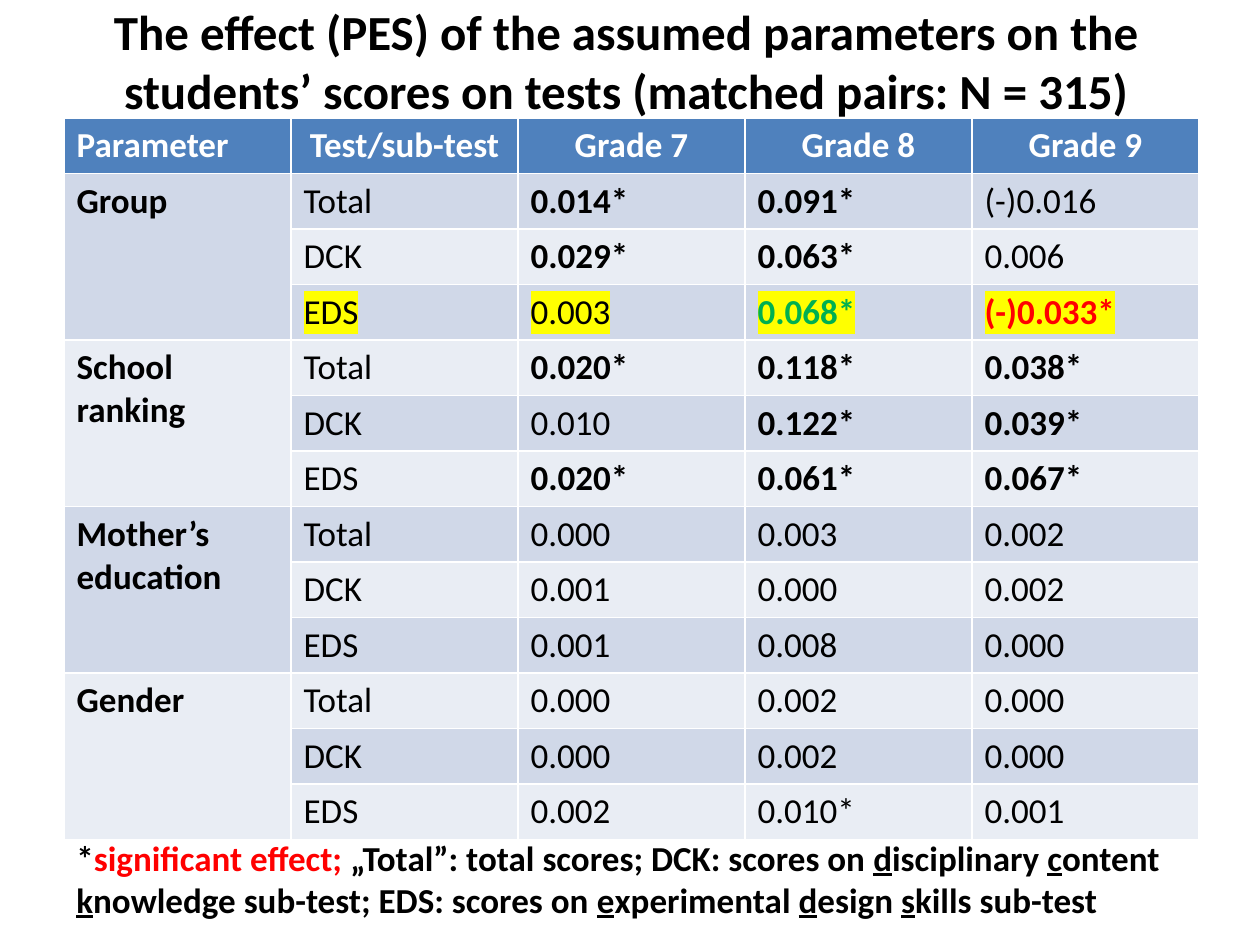
from lxml import etree
from pptx import Presentation
from pptx.dml.color import RGBColor
from pptx.enum.text import MSO_ANCHOR, MSO_AUTO_SIZE, PP_ALIGN
from pptx.oxml.ns import qn
from pptx.util import Pt

CENTER, LEFT = PP_ALIGN.CENTER, PP_ALIGN.LEFT
MIDDLE, TOP = MSO_ANCHOR.MIDDLE, MSO_ANCHOR.TOP
NO_FIT, GROW = MSO_AUTO_SIZE.NONE, MSO_AUTO_SIZE.SHAPE_TO_FIT_TEXT

BLACK = RGBColor(0x00, 0x00, 0x00)
WHITE = RGBColor(0xFF, 0xFF, 0xFF)
RED = RGBColor(0xFF, 0x00, 0x00)
GREEN = RGBColor(0x00, 0xB0, 0x50)
YELLOW = RGBColor(0xFF, 0xFF, 0x00)
BLUE = RGBColor(0x4F, 0x81, 0xBD)
BANDS = (RGBColor(0xD0, 0xD8, 0xE8), RGBColor(0xE9, 0xED, 0xF4))

TITLE = ("The effect (PES) of the assumed parameters on the "
         "students’ scores on tests (matched pairs: N = 315)")
HEAD = ("Parameter", "Test/sub-test", "Grade 7", "Grade 8", "Grade 9")
TESTS = ("Total", "DCK", "EDS")
GROUPS = (
    ("Group", (("0.014*", "0.091*", "(-)0.016"),
               ("0.029*", "0.063*", "0.006"),
               ("0.003", "0.068*", "(-)0.033*"))),
    ("School ranking", (("0.020*", "0.118*", "0.038*"),
                        ("0.010", "0.122*", "0.039*"),
                        ("0.020*", "0.061*", "0.067*"))),
    ("Mother’s education", (("0.000", "0.003", "0.002"),
                            ("0.001", "0.000", "0.002"),
                            ("0.001", "0.008", "0.000"))),
    ("Gender", (("0.000", "0.002", "0.000"),
                ("0.000", "0.002", "0.000"),
                ("0.002", "0.010*", "0.001"))),
)
TINTS = {"0.068*": GREEN, "(-)0.033*": RED}
PLAIN = ("0.010*",)
MARKED = ("Group", "EDS")
# Letters between underscores are underlined.
NOTE = (
    ("*", BLACK),
    ("significant effect; ", RED),
    ("„Total”: total scores; DCK: scores on _d_isciplinary _c_ontent "
     "_k_nowledge sub-test; EDS: scores on _e_xperimental _d_esign "
     "_s_kills sub-test", BLACK),
)

TITLE_BOX = (59, 0, 1134, 121)
NOTE_BOX = (64, 830, 1153, 97)
LEFT_X, TOP_Y, COL_W, ROW_H = 64, 118, 227, 52


def px(n):
    return round(n * 914400 / 126)


def add_run(para, text, mark=None, color=BLACK, size=20, **look):
    """Add a run; mark is a highlight colour, look holds further font values."""
    run = para.add_run()
    run.text = text
    run.font.color.rgb = color
    form = {"name": "Calibri", "size": Pt(size), **look}
    for key, value in form.items():
        setattr(run.font, key, value)
    if mark is not None:
        light = etree.Element(qn("a:highlight"))
        etree.SubElement(light, qn("a:srgbClr"), val=str(mark))
        run.font._element.find(qn("a:solidFill")).addnext(light)


def add_box(slide, box, anchor, fit, align):
    frame = slide.shapes.add_textbox(*map(px, box)).text_frame
    form = {"word_wrap": True, "vertical_anchor": anchor, "auto_size": fit}
    for key, value in form.items():
        setattr(frame, key, value)
    para = frame.paragraphs[0]
    para.alignment = align
    return para


def fill_cell(cell, text, back, align=LEFT, **look):
    cell.fill.solid()
    cell.fill.fore_color.rgb = back
    para = cell.text_frame.paragraphs[0]
    para.alignment = align
    add_run(para, text, **look)


def add_grid(slide):
    rows, cols = 1 + len(GROUPS) * len(TESTS), len(HEAD)
    area = (LEFT_X, TOP_Y, COL_W * cols, ROW_H * rows)
    grid = slide.shapes.add_table(rows, cols, *map(px, area)).table
    for col, text in enumerate(HEAD):
        fill_cell(grid.cell(0, col), text, BLUE, CENTER if col else LEFT,
                  color=WHITE, bold=True)
    row = 1
    for name, lines in GROUPS:
        first = grid.cell(row, 0)
        first.merge(grid.cell(row + len(TESTS) - 1, 0))
        fill_cell(first, name, BANDS[(row - 1) % 2], bold=True)
        for test, values in zip(TESTS, lines):
            mark = YELLOW if (name, test) == MARKED else None
            for col, text in enumerate((test, *values), 1):
                fill_cell(grid.cell(row, col), text, BANDS[(row - 1) % 2],
                          mark=mark, color=TINTS.get(text, BLACK),
                          bold=text.endswith("*") and text not in PLAIN)
            row += 1


def main():
    deck = Presentation()
    deck.slide_width, deck.slide_height = px(1260), px(945)
    slide = deck.slides.add_slide(deck.slide_layouts[6])

    title = add_box(slide, TITLE_BOX, MIDDLE, NO_FIT, CENTER)
    add_run(title, TITLE, size=28, bold=True)
    add_grid(slide)
    note = add_box(slide, NOTE_BOX, TOP, GROW, LEFT)
    for text, color in NOTE:
        for i, part in enumerate(text.split("_")):
            add_run(note, part, color=color, bold=True, underline=i % 2 == 1)
    deck.save("out.pptx")


if __name__ == "__main__":
    main()
